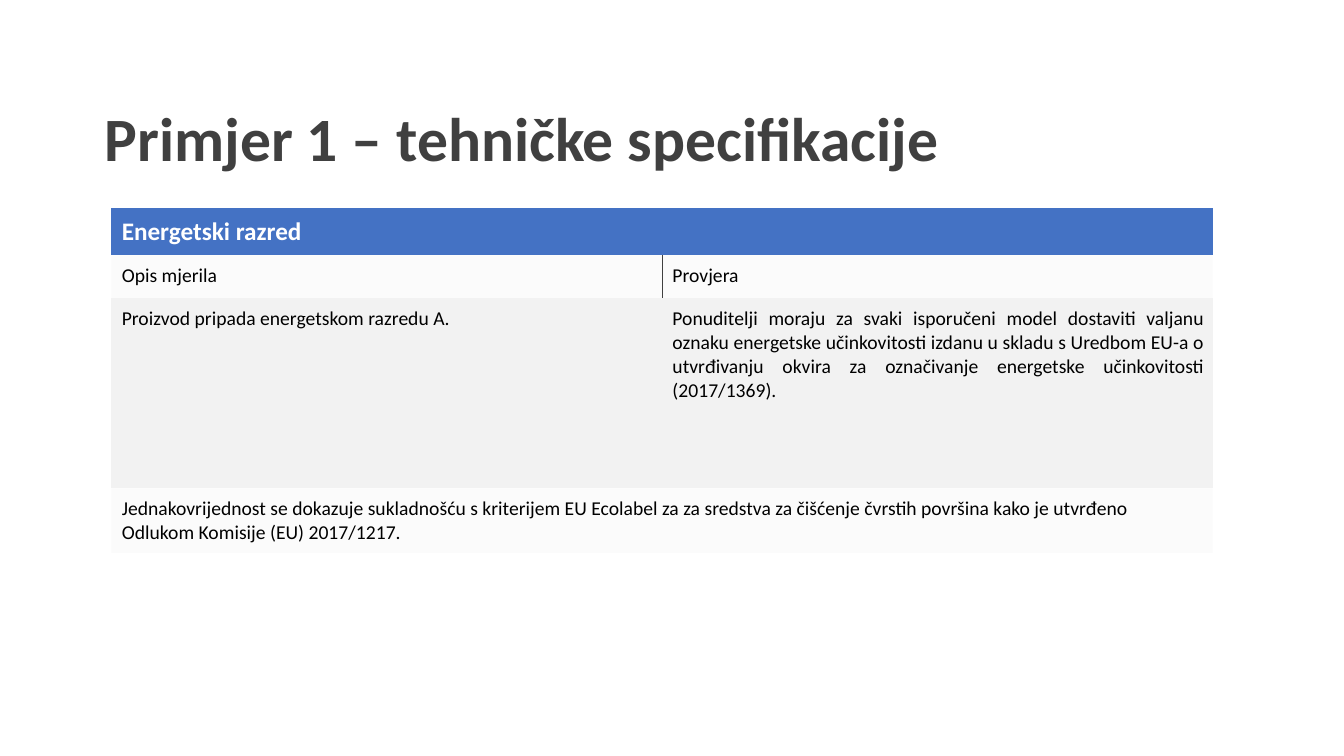
import pptx
import pptx.util
import pptx.dml.color
import pptx.enum.text
import pptx.oxml
import pptx.oxml.ns

RGB = pptx.dml.color.RGBColor
ALIGN = pptx.enum.text.PP_ALIGN
ANCHOR = pptx.enum.text.MSO_ANCHOR

PX = 9525  # EMU, 96 px to the inch
FONT = "Calibri"
BLUE = RGB(0x44, 0x72, 0xC4)
PALE = RGB(0xF2, 0xF2, 0xF2)
DARK = RGB(0x40, 0x40, 0x40)
BLACK = RGB(0, 0, 0)
WHITE = RGB(255, 255, 255)
PLAIN = "{2D5ABB26-0587-4C30-8999-92F81FD0307C}"  # no style, no grid

HEAD = "Energetski razred"
LABELS = ["Opis mjerila", "Provjera"]
DETAILS = [
    "Proizvod pripada energetskom razredu A.",
    "Ponuditelji moraju za svaki isporučeni model dostaviti valjanu oznaku "
    "energetske učinkovitosti izdanu u skladu s Uredbom EU-a o utvrđivanju "
    "okvira za označivanje energetske učinkovitosti (2017/1369).",
]
NOTE = (
    "Jednakovrijednost se dokazuje sukladnošću s kriterijem EU Ecolabel za za "
    "sredstva za čišćenje čvrstih površina kako je utvrđeno Odlukom Komisije "
    "(EU) 2017/1217."
)


def write(frame, text, size=14, color=BLACK, bold=False, align=ALIGN.LEFT, space=1.0):
    frame.word_wrap = True
    par = frame.paragraphs[0]
    par.alignment = align
    par.line_spacing = space
    run = par.add_run()
    run.text = text
    run.font.name = FONT
    run.font.size = pptx.util.Pt(size)
    run.font.bold = bold
    run.font.color.rgb = color


def paint(cell, color, alpha=None):
    """Fill a cell; alpha is its opacity in percent."""
    cell.fill.solid()
    cell.fill.fore_color.rgb = color
    if alpha is not None:
        tint = cell._tc.tcPr.find(".//" + pptx.oxml.ns.qn("a:srgbClr"))
        tint.append(pptx.oxml.parse_xml(
            f'<a:alpha {pptx.oxml.ns.nsdecls("a")} val="{alpha * 1000}"/>'))


def edge(cell, side):
    """Draw a thin line on the side "L" or "R" of a cell."""
    line = pptx.oxml.parse_xml(
        f'<a:ln{side} {pptx.oxml.ns.nsdecls("a")} w="6350"><a:solidFill>'
        f'<a:srgbClr val="{DARK}"/></a:solidFill></a:ln{side}>')
    cell._tc.get_or_add_tcPr().insert(0, line)


def fill_cell(cell, text, color=PALE, alpha=None, anchor=ANCHOR.TOP, **style):
    cell.margin_left = 10 * PX
    cell.margin_right = cell.margin_top = cell.margin_bottom = 8 * PX
    cell.vertical_anchor = anchor
    paint(cell, color, alpha)
    write(cell.text_frame, text, **style)


def add_title(slide, box, text):
    title = slide.shapes.title
    title.left, title.top, title.width, title.height = [n * PX for n in box]
    frame = title.text_frame
    frame.auto_size = pptx.enum.text.MSO_AUTO_SIZE.NONE
    frame.vertical_anchor = ANCHOR.MIDDLE
    write(frame, text, size=44, color=DARK, bold=True, space=0.9)


def add_grid(slide, box, heights):
    left, top, width, height = [n * PX for n in box]
    table = slide.shapes.add_table(len(heights), 2, left, top, width, height).table
    table.first_row = table.horz_banding = False
    table._tbl.tblPr.find(pptx.oxml.ns.qn("a:tableStyleId")).text = PLAIN
    for row, tall in zip(table.rows, heights):
        row.height = tall * PX
    for row in (0, 3):
        table.cell(row, 0).merge(table.cell(row, 1))

    fill_cell(table.cell(0, 0), HEAD, color=BLUE, anchor=ANCHOR.MIDDLE,
              size=18, bold=True)
    table.cell(0, 0).text_frame.paragraphs[0].runs[0].font.color.rgb = WHITE
    for col, side in enumerate("RL"):
        fill_cell(table.cell(1, col), LABELS[col], alpha=30)
        edge(table.cell(1, col), side)
        fill_cell(table.cell(2, col), DETAILS[col], align=ALIGN.JUSTIFY)
    fill_cell(table.cell(3, 0), NOTE, alpha=30)


def main():
    deck = pptx.Presentation()
    deck.slide_width, deck.slide_height = 1280 * PX, 720 * PX
    slide = deck.slides.add_slide(deck.slide_layouts[5])
    add_title(slide, (90, 82, 1080, 105), "Primjer 1 – tehničke specifikacije")
    add_grid(slide, (106, 198, 1049, 322), [40, 41, 181, 60])
    deck.save("out.pptx")


if __name__ == "__main__":
    main()
